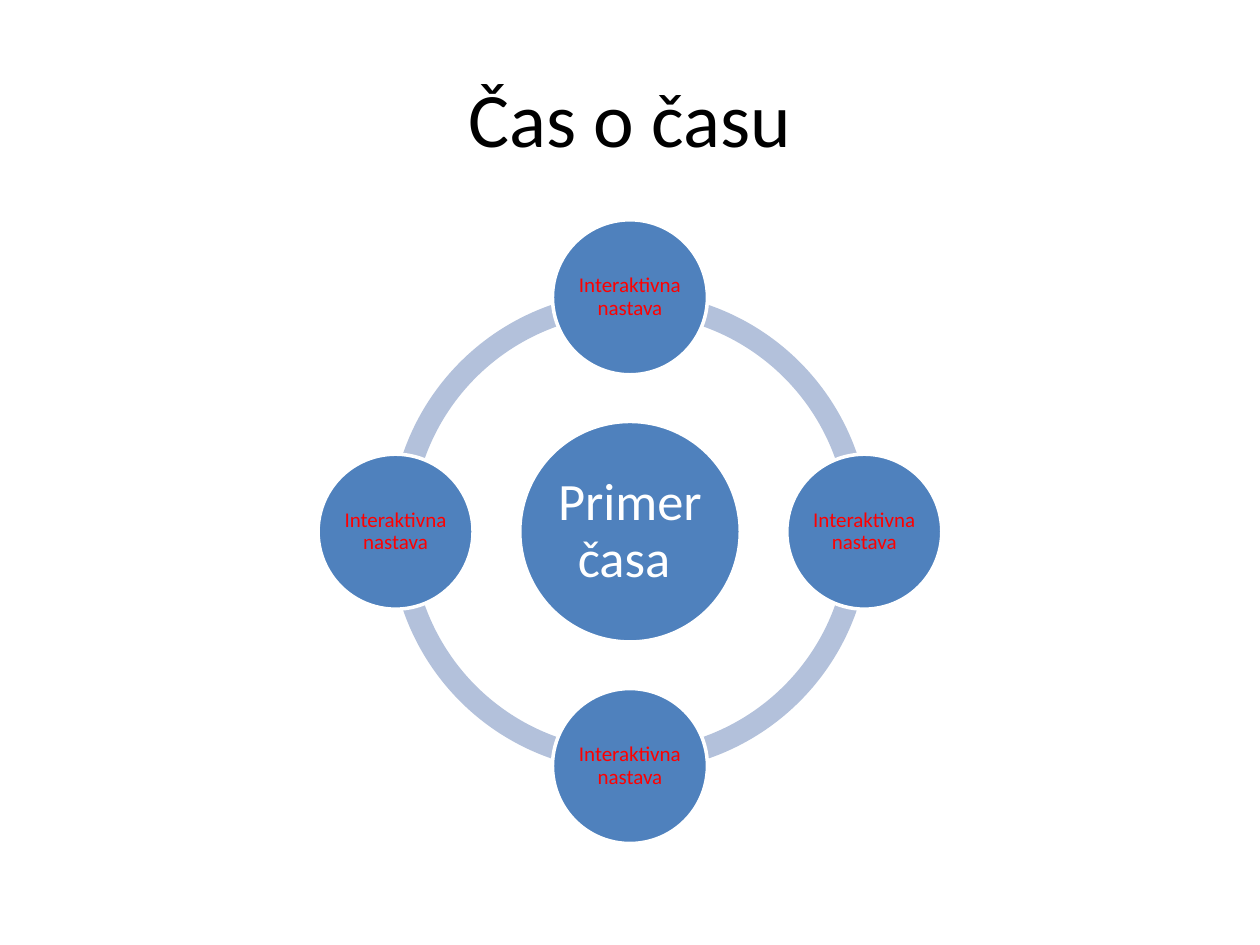
from pptx import Presentation
from pptx.dml.color import RGBColor
from pptx.enum.shapes import MSO_SHAPE
from pptx.enum.text import MSO_ANCHOR, PP_ALIGN
from pptx.util import Inches, Pt

ARC, CIRCLE = MSO_SHAPE.BLOCK_ARC, MSO_SHAPE.OVAL
MIDDLE, CENTER = MSO_ANCHOR.MIDDLE, PP_ALIGN.CENTER

FONT = "Calibri"
COLORS = {"title": "000000", "ring": "B3C1DB", "circle": "4F81BD",
          "white": "FFFFFF", "topic": "FF0000"}

# Geometry of the radial diagram, in inches
CENTER_X, CENTER_Y = 5, 4.22
RING_SIZE, RING_THICKNESS = 3.81, 0.046
ORBIT = 1.86
QUARTER_TURN = 54  # 90 degrees in adjustment units

TOPICS = [
    ("Interaktivna nastava", 0, -1),
    ("Interaktivna nastava", 1, 0),
    ("Interaktivna nastava", 0, 1),
    ("Interaktivna nastava", -1, 0),
]


def rgb(name):
    return RGBColor.from_string(COLORS[name])


class RadialSlide:
    def __init__(self, slide):
        self.slide = slide

    def set_text(self, frame, text, size, color):
        frame.word_wrap = True
        frame.vertical_anchor = MIDDLE
        paragraph = frame.paragraphs[0]
        paragraph.text = text
        paragraph.alignment = CENTER
        paragraph.font.name = FONT
        paragraph.font.size = Pt(size)
        paragraph.font.color.rgb = rgb(color)
        return paragraph

    def title(self, text):
        heading = self.slide.shapes.title
        heading.left, heading.top = Inches(0.5), Inches(0.3)
        heading.width, heading.height = Inches(9), Inches(1.25)
        self.set_text(heading.text_frame, text, 44, "title")

    def centred_shape(self, kind, x, y, size, fill):
        shape = self.slide.shapes.add_shape(
            kind, Inches(x - size / 2), Inches(y - size / 2),
            Inches(size), Inches(size))
        shape.shadow.inherit = False
        shape.fill.solid()
        shape.fill.fore_color.rgb = rgb(fill)
        return shape

    def ring_quarter(self, index):
        arc = self.centred_shape(ARC, CENTER_X, CENTER_Y, RING_SIZE, "ring")
        arc.line.fill.background()
        arc.adjustments[0] = index * QUARTER_TURN
        arc.adjustments[1] = (index + 1) % 4 * QUARTER_TURN
        arc.adjustments[2] = RING_THICKNESS

    def circle(self, text, x, y, diameter, size, color, inset):
        disc = self.centred_shape(CIRCLE, x, y, diameter, "circle")
        disc.line.color.rgb = rgb("white")
        disc.line.width = Pt(2)
        frame = disc.text_frame
        frame.margin_left = frame.margin_right = Inches(inset)
        frame.margin_top = frame.margin_bottom = Inches(inset)
        self.set_text(frame, text, size, color).line_spacing = 0.9


def main():
    prs = Presentation()
    prs.slide_width, prs.slide_height = Inches(10), Inches(7.5)
    page = RadialSlide(prs.slides.add_slide(prs.slide_layouts[5]))
    page.title("Čas o času")

    # Ring behind the circles
    for index in (2, 1, 0, 3):
        page.ring_quarter(index)

    # Central circle and its surrounding topics
    page.circle("Primer časa ", CENTER_X, CENTER_Y, 1.75, 30, "white", 0.04)
    for topic, dx, dy in TOPICS:
        page.circle(topic, CENTER_X + dx * ORBIT, CENTER_Y + dy * ORBIT,
                    1.23, 12, "topic", 0.02)

    prs.save("out.pptx")


if __name__ == "__main__":
    main()
